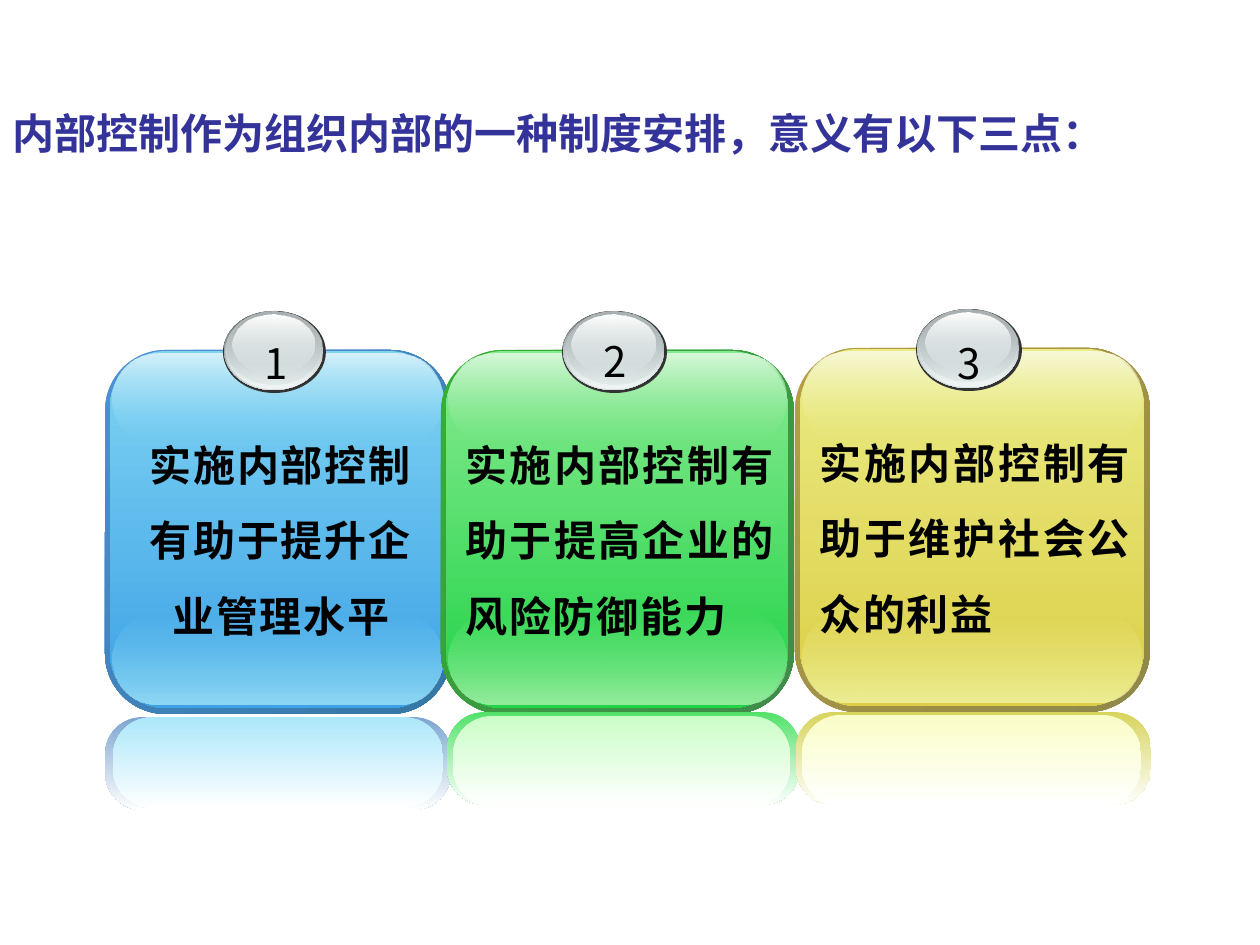
from lxml import etree
from pptx import Presentation
from pptx.dml.color import RGBColor
from pptx.enum.shapes import MSO_SHAPE
from pptx.enum.text import MSO_AUTO_SIZE, PP_ALIGN
from pptx.oxml.ns import qn
from pptx.util import Emu, Pt

ROUND, OVAL = MSO_SHAPE.ROUNDED_RECTANGLE, MSO_SHAPE.OVAL
CENTER, JUSTIFY = PP_ALIGN.CENTER, PP_ALIGN.JUSTIFY
GROW = MSO_AUTO_SIZE.SHAPE_TO_FIT_TEXT
FONT = "Noto Sans CJK SC"
DPI = 126

BLACK = RGBColor(0x00, 0x00, 0x00)
WHITE = RGBColor(0xFF, 0xFF, 0xFF)
NAVY = RGBColor(0x33, 0x33, 0x99)
CHARCOAL = RGBColor(0x33, 0x33, 0x33)
STEEL = RGBColor(0x63, 0x68, 0x69)
GREY = RGBColor(0xAA, 0xB2, 0xB3)
SILVER = RGBColor(0xD6, 0xE1, 0xE2)
PEARL = RGBColor(0xF1, 0xF5, 0xF5)

BLUE = {
    "rim": (RGBColor(0x4E, 0x91, 0xD4), RGBColor(0x34, 0x77, 0xA4)),
    "body": (RGBColor(0x80, 0xD4, 0xF2), RGBColor(0x3C, 0xA1, 0xE6)),
    "gloss": (RGBColor(0xD5, 0xF1, 0xFB), RGBColor(0x8F, 0xD9, 0xF4)),
    "mirror": (RGBColor(0x7E, 0xA5, 0xD0), RGBColor(0xAC, 0xE7, 0xFA)),
}
GREEN = {
    "rim": (RGBColor(0x34, 0xB0, 0x34), RGBColor(0x3F, 0x8B, 0x4A)),
    "body": (RGBColor(0x88, 0xEA, 0x91), RGBColor(0x21, 0xD3, 0x47)),
    "gloss": (RGBColor(0xD7, 0xF8, 0xDA), RGBColor(0x96, 0xED, 0x9E)),
    "mirror": (RGBColor(0x52, 0xE2, 0x6A), RGBColor(0xCB, 0xFD, 0xC7)),
}
YELLOW = {
    "rim": (RGBColor(0xB5, 0x9F, 0x43), RGBColor(0x8F, 0x88, 0x49)),
    "body": (RGBColor(0xEA, 0xEC, 0x86), RGBColor(0xDC, 0xCE, 0x46)),
    "gloss": (RGBColor(0xF8, 0xF9, 0xD7), RGBColor(0xED, 0xEE, 0x95)),
    "mirror": (RGBColor(0xD7, 0xD4, 0x5D), RGBColor(0xFA, 0xFD, 0xC7)),
}

CARDS = [
    ((105, 350, 346, 364), BLUE, "1", 306, "实施内部控制有助于提升企业管理水平", CENTER,
     (105, 717), (8, 0)),
    ((441, 350, 353, 364), GREEN, "2", 304, "实施内部控制有助于提高企业的风险防御能力", JUSTIFY,
     (447, 712), (6, 4)),
    ((795, 348, 355, 364), YELLOW, "3", 306, "实施内部控制有助于维护社会公众的利益", JUSTIFY,
     (796, 712), (6, 3)),
]


def px(n):
    return Emu(round(n * 914400 / DPI))


def add_layer(shapes, kind, box, colors, alphas=(100, 100), angle=90, adj=None):
    sp = shapes.add_shape(kind, *map(px, box))
    sp.shadow.inherit = False
    sp.line.fill.background()
    if adj is not None:
        sp.adjustments[0] = adj
    sp.fill.gradient()
    sp.fill.gradient_angle = 360 - angle
    for stop, color in zip(sp.fill.gradient_stops, colors):
        stop.color.rgb = color
    for clr, alpha in zip(sp.element.spPr.iter(qn("a:srgbClr")), alphas):
        if alpha < 100:
            etree.SubElement(clr, qn("a:alpha")).set("val", str(alpha * 1000))


def add_text(shapes, box, text, color, align, bold=False, wrap=True, spacing=0):
    tf = shapes.add_textbox(*map(px, box)).text_frame
    tf.word_wrap = wrap
    tf.auto_size = GROW
    p = tf.paragraphs[0]
    p.alignment = align
    p.line_spacing = 1.5
    p.space_before = Pt(6)
    r = p.add_run()
    r.text = text
    r.font.size = Pt(24)
    r.font.bold = bold
    r.font.color.rgb = color
    r.font.name = FONT
    rPr = r.font._element
    etree.SubElement(rPr, qn("a:ea")).set("typeface", FONT)
    if spacing:
        rPr.set("spc", str(spacing * 100))


def add_badge(shapes, box, number, number_y):
    x, y, w, h = box
    sp = shapes.add_shape(OVAL, *map(px, box))
    sp.shadow.inherit = False
    sp.line.fill.background()
    sp.fill.solid()
    sp.fill.fore_color.rgb = CHARCOAL
    for dx, dy, trim, height, colors, alphas in [
        (1, 0, 4, 79, (STEEL, SILVER), (100, 100)),
        (2, 1, 6, 77, (SILVER, PEARL), (0, 100)),
        (4, 1, 10, 72, (GREY, SILVER), (100, 48)),
        (9, 4, 21, 59, (WHITE, SILVER), (100, 38)),
    ]:
        add_layer(shapes, OVAL, (x + dx, y + dy, w - trim, height), colors, alphas)
    add_text(shapes, (x + 23, number_y, 61, 63), number, BLACK, CENTER, wrap=False)


def add_reflection(shapes, box, inset, colors):
    x, y, w, h = box
    dx, dy = inset
    outer, inner = colors
    add_layer(shapes, ROUND, box, (outer, WHITE), adj=0.404)
    add_layer(shapes, ROUND, (x + dx, y + dy, w - 16, 91), (inner, WHITE), adj=0.429)


def add_card(s, box, theme, number, number_y, text, align, mirror_at, mirror_inset):
    x, y, w, h = box
    shapes = s.shapes.add_group_shape().shapes
    light = theme["body"][0]
    shine, glow = theme["gloss"]
    add_layer(shapes, ROUND, box, theme["rim"], angle=45, adj=0.175)
    add_layer(shapes, ROUND, (x + 5, y + 1, w - 11, h - 7), theme["body"], adj=0.167)
    add_layer(shapes, ROUND, (x + 8, y + 264, w - 16, 91), (light, glow), (0, 100), adj=0.5)
    add_layer(shapes, ROUND, (x + 8, y + 4, w - 16, 91), (shine, light), (100, 0), adj=0.5)
    badge_w = round(w * 0.298)
    badge_x = x + (w - badge_w) // 2 - 3
    add_badge(shapes, (badge_x, y - 39, badge_w, 82), number, number_y)
    add_text(shapes, (x + 12, y + 58, w - 18, 242), text, BLACK, align, bold=True, spacing=1)
    add_reflection(shapes, (*mirror_at, w, 93), mirror_inset, theme["mirror"])


def add_title(s, box):
    add_text(s.shapes, box, "内部控制作为组织内部的一种制度安排，意义有以下三点：", NAVY, JUSTIFY, bold=True)


def main():
    prs = Presentation()
    prs.slide_width, prs.slide_height = px(1260), px(945)
    s = prs.slides.add_slide(prs.slide_layouts[6])
    add_title(s, (0, 76, 1172, 88))
    for card in CARDS:
        add_card(s, *card)
    prs.save("out.pptx")


if __name__ == "__main__":
    main()
